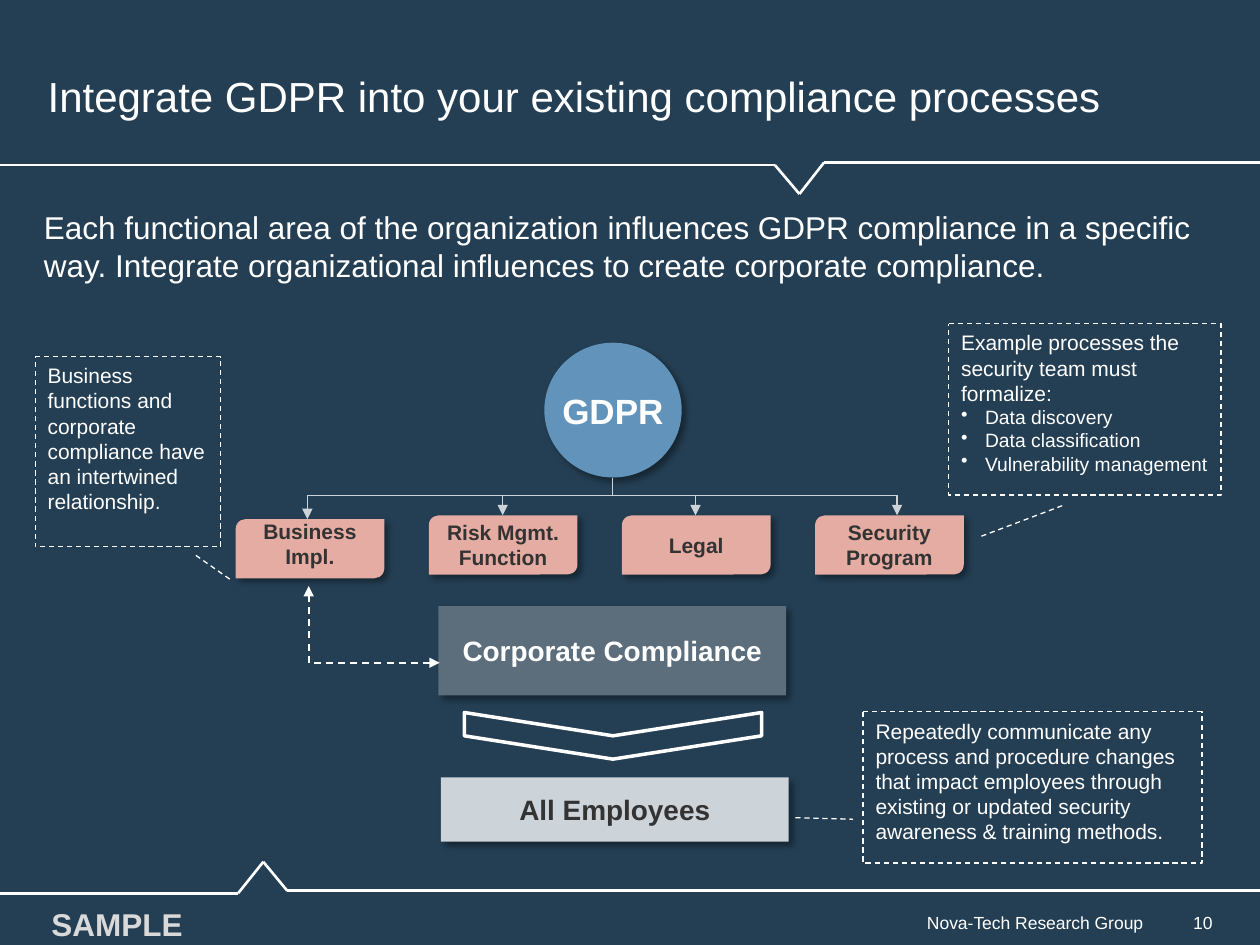
import itertools

import pptx
import pptx.dml.color
import pptx.enum.dml
import pptx.enum.shapes
import pptx.enum.text
import pptx.oxml
import pptx.oxml.ns
import pptx.util

SHAPE = pptx.enum.shapes.MSO_SHAPE
ALIGN = pptx.enum.text.PP_ALIGN
ANCHOR = pptx.enum.text.MSO_ANCHOR

WIDTH, HEIGHT = pptx.util.Inches(10), pptx.util.Inches(7.5)
COLUMNS, ROWS = 100, 75

NAVY, WHITE, DARK = "243F54", "FFFFFF", "333333"
BLUE, SLATE, PALE, ROSE = "6294BB", "5C6D7B", "CCD3D9", "E4ACA2"


def column(count):
    return round(WIDTH * count / COLUMNS)


def row(count):
    return round(HEIGHT * count / ROWS)


def place(left, top, width, height):
    return column(left), row(top), column(width), row(height)


def color(hex_string):
    return pptx.dml.color.RGBColor.from_string(hex_string)


def element(name, attributes="", content=""):
    """Make an element of the drawing namespace."""
    namespace = pptx.oxml.ns.nsdecls("a")
    return pptx.oxml.parse_xml(f"<a:{name} {namespace} {attributes}>{content}</a:{name}>")


def style_line(line, line_color, points, dashed=False):
    line.color.rgb = color(line_color)
    line.width = pptx.util.Pt(points)
    if dashed:
        line.dash_style = pptx.enum.dml.MSO_LINE.DASH


def write(shape, paragraphs, size, text_color, bold=False, align=ALIGN.LEFT,
          anchor=ANCHOR.MIDDLE, wrap=True):
    frame = shape.text_frame
    frame.word_wrap = wrap
    frame.vertical_anchor = anchor
    frame.text = "\n".join(paragraphs)
    for paragraph in frame.paragraphs:
        paragraph.alignment = align
        paragraph.font.name = "Arial"
        paragraph.font.size = pptx.util.Pt(size)
        paragraph.font.bold = bold
        paragraph.font.color.rgb = color(text_color)
    return frame


def add_text(slide, box, text, size, text_color=WHITE, **style):
    shape = slide.shapes.add_textbox(*place(*box))
    return write(shape, [text], size, text_color, **style)


def add_shape(slide, kind, box, fill=None):
    shape = slide.shapes.add_shape(kind, *place(*box))
    shape.shadow.inherit = False
    shape.line.fill.background()
    if fill:
        shape.fill.solid()
        shape.fill.fore_color.rgb = color(fill)
    else:
        shape.fill.background()
    return shape


def add_node(slide, kind, box, fill, text, size, text_color, **style):
    """Add a filled shape with a soft shadow and a bold centred label."""
    shape = add_shape(slide, kind, box, fill)
    effects = shape._element.spPr.find(pptx.oxml.ns.qn("a:effectLst"))
    effects.append(element(
        "outerShdw", 'blurRad="50800" dist="38100" dir="2700000" algn="tl" rotWithShape="0"',
        '<a:srgbClr val="000000"><a:alpha val="40000"/></a:srgbClr>'))
    write(shape, [text], size, text_color, bold=True, align=ALIGN.CENTER, **style)


def add_callout(slide, box, pointer, text, bullets=(), right_inset=0):
    """Add a dashed note; pointer holds the y, x shares of both line ends."""
    shape = add_shape(slide, SHAPE.LINE_CALLOUT_1, box)
    for index, share in enumerate(pointer):
        shape.adjustments[index] = share
    style_line(shape.line, WHITE, 0.75, dashed=True)
    frame = write(shape, [text, *bullets], 12, WHITE, anchor=ANCHOR.TOP)
    frame.margin_right = column(right_inset)
    for paragraph in frame.paragraphs[1:]:
        paragraph.font.size = pptx.util.Pt(11)
        properties = paragraph._p.get_or_add_pPr()
        properties.set("marL", str(column(1.9)))
        properties.set("indent", str(-column(1.9)))
        properties.insert_element_before(element("buChar", 'char="•"'), "a:defRPr")


def add_path(slide, points, line_color, width, dashed=False, arrow=None):
    """Join the points with straight connectors; arrow is headEnd or tailEnd."""
    for start, end in itertools.pairwise(points):
        connector = slide.shapes.add_connector(
            pptx.enum.shapes.MSO_CONNECTOR.STRAIGHT,
            column(start[0]), row(start[1]), column(end[0]), row(end[1]))
        style_line(connector.line, line_color, width, dashed)
        properties = connector._element.spPr
        if arrow:
            outline = properties.find(pptx.oxml.ns.qn("a:ln"))
            outline.append(element(arrow, 'type="triangle"'))
        properties.append(element("effectLst"))


def add_frame(slide):
    """Add the backdrop, the heading texts and the footer."""
    add_shape(slide, SHAPE.RECTANGLE, (0, 0, COLUMNS, ROWS), NAVY)
    add_text(slide, (2.8, 2.8, 94.3, 9.6),
             "Integrate GDPR into your existing compliance processes", 24)
    add_text(slide, (2.5, 16, 94.5, 8.2),
             "Each functional area of the organization influences GDPR compliance in a specific "
             "way. Integrate organizational influences to create corporate compliance.",
             18, anchor=ANCHOR.TOP)
    add_text(slide, (0, 71.4, 91.7, 3.7), "Nova-Tech Research Group", 10, align=ALIGN.RIGHT)
    number = add_text(slide, (91.7, 71.4, 8.3, 3.7), "10", 10)
    number.margin_left = column(3)
    add_text(slide, (2.6, 72.1, 13.4, 2.4), "SAMPLE", 18, "D9D9D9",
             bold=True, align=ALIGN.CENTER)
    add_path(slide, [(0, 13.1), (61.5, 13.1), (63.45, 15.4), (65.4, 12.9), (COLUMNS, 12.9)],
             WHITE, 1.5)
    add_path(slide, [(0, 70.9), (18.9, 70.9), (20.9, 68.4), (22.8, 70.7), (COLUMNS, 70.7)],
             WHITE, 1.5)


def add_diagram(slide):
    bar = 39.3
    add_node(slide, SHAPE.OVAL, (43.2, 27.2, 10.9, 10.7), BLUE, "GDPR", 20, WHITE, wrap=False)
    functions = [
        ("Business Impl.", 41.2, 24.4, ANCHOR.BOTTOM),
        ("Risk Mgmt. Function", 40.9, 39.9, ANCHOR.MIDDLE),
        ("Legal", 40.9, 55.2, ANCHOR.MIDDLE),
        ("Security Program", 40.9, 71.2, ANCHOR.MIDDLE),
    ]
    for index, (label, top, arrow_left, anchor) in enumerate(functions):
        add_node(slide, SHAPE.ROUND_2_DIAG_RECTANGLE, (18.7 + 15.33 * index, top, 11.8, 4.7),
                 ROSE, label, 12, DARK, anchor=anchor)
        add_path(slide, [(arrow_left, bar), (arrow_left, top)], PALE, 0.75, arrow="tailEnd")
    add_path(slide, [(48.6, 37.9), (48.6, bar)], PALE, 0.75)
    add_path(slide, [(24.4, bar), (71.2, bar)], PALE, 0.75)

    add_node(slide, SHAPE.RECTANGLE, (34.8, 48.1, 27.6, 7.1), SLATE,
             "Corporate Compliance", 16, WHITE)
    add_node(slide, SHAPE.RECTANGLE, (35, 61.7, 27.6, 5.1), PALE, "All Employees", 16, DARK)
    chevron = add_shape(slide, SHAPE.CHEVRON, (46.8, 46.6, 3.7, 23.6))
    chevron.rotation = 90
    style_line(chevron.line, WHITE, 2)
    add_path(slide, [(34.9, 52.6), (24.5, 52.6)], WHITE, 1, dashed=True, arrow="headEnd")
    add_path(slide, [(24.5, 52.6), (24.5, 46.5)], WHITE, 1, dashed=True, arrow="tailEnd")


def add_callouts(slide):
    add_callout(slide, (75.3, 25.7, 21.6, 13.6), (1.24, 0.12, 1.06, 0.42),
                "Example processes the security team must formalize:",
                ["Data discovery", "Data classification", "Vulnerability management"])
    add_callout(slide, (68.5, 56.5, 26.9, 12), (0.7, -0.2, 0.71, -0.03),
                "Repeatedly communicate any process and procedure changes that impact employees "
                "through existing or updated security awareness & training methods.")
    add_callout(slide, (2.8, 28.3, 14.7, 15.1), (1.17, 1.05, 1.04, 0.86),
                "Business functions and corporate compliance have an intertwined relationship.",
                right_inset=1)


def main():
    presentation = pptx.Presentation()
    presentation.slide_width, presentation.slide_height = WIDTH, HEIGHT
    slide = presentation.slides.add_slide(presentation.slide_layouts[6])
    add_frame(slide)
    add_diagram(slide)
    add_callouts(slide)
    presentation.save("out.pptx")


if __name__ == "__main__":
    main()
